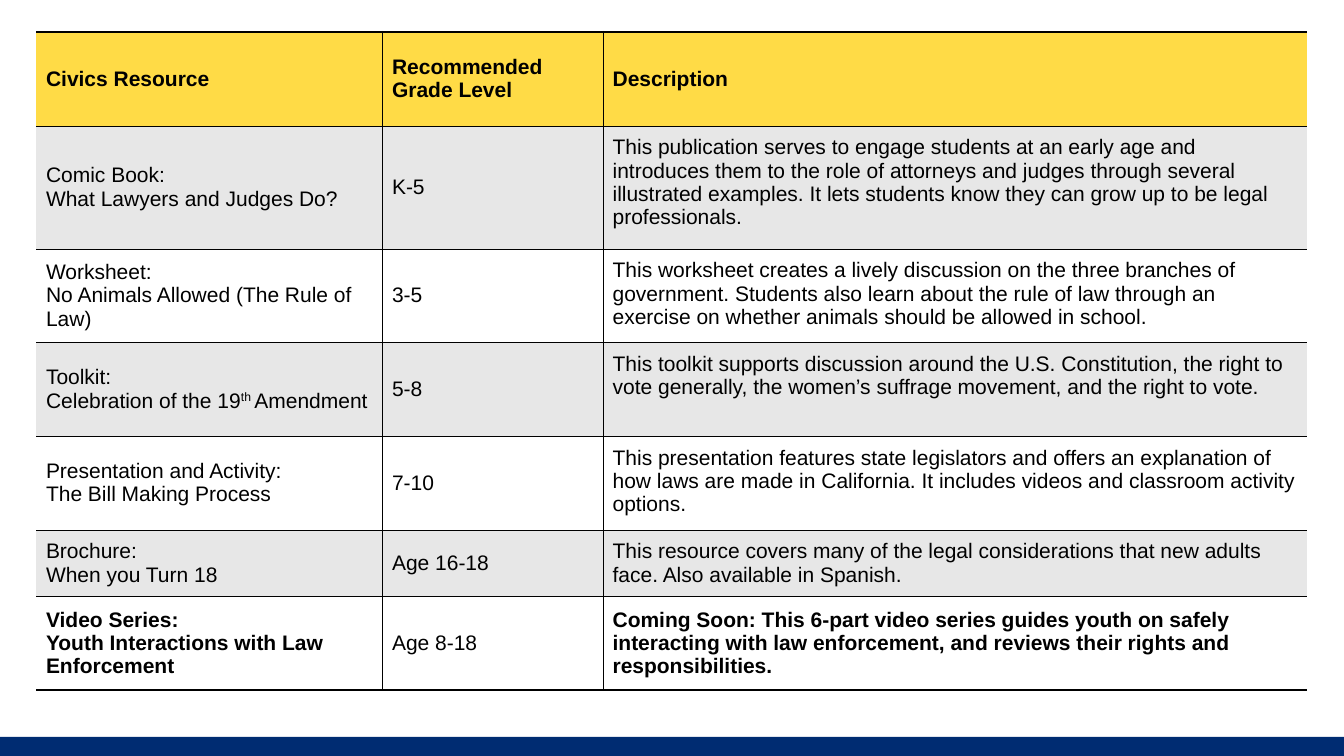
from lxml import etree
from pptx import Presentation
from pptx.dml.color import RGBColor
from pptx.enum.shapes import MSO_SHAPE
from pptx.enum.text import MSO_ANCHOR
from pptx.oxml.ns import qn
from pptx.util import Cm, Pt

RECT = MSO_SHAPE.RECTANGLE
TOP, MIDDLE = MSO_ANCHOR.TOP, MSO_ANCHOR.MIDDLE

BLACK, WHITE, GREY = "000000", "FFFFFF", "E7E7E7"
GOLD, NAVY = "FFDB46", "002C72"
THIN, THICK = 0.25, 2
WIDTHS = [8.72, 5.56, 17.76]
HEIGHTS = [2.36, 3.1, 2.36, 2.36, 2.36, 1.63, 2.36]

HEAD = [["Civics Resource"], ["Recommended", "Grade Level"], ["Description"]]
ITEMS = [
    ("Comic Book:", ["What Lawyers and Judges Do?"], "K-5",
     "This publication serves to engage students at an early age and "
     "introduces them to the role of attorneys and judges through several "
     "illustrated examples. It lets students know they can grow up to be "
     "legal professionals."),
    ("Worksheet:", ["No Animals Allowed (The Rule of Law)"], "3-5",
     "This worksheet creates a lively discussion on the three branches of "
     "government. Students also learn about the rule of law through an "
     "exercise on whether animals should be allowed in school."),
    ("Toolkit:", ["Celebration of the 19", "th ", "Amendment"], "5-8",
     "This toolkit supports discussion around the U.S. Constitution, the "
     "right to vote generally, the women’s suffrage movement, and the right "
     "to vote."),
    ("Presentation and Activity:", ["The Bill Making Process"], "7-10",
     "This presentation features state legislators and offers an explanation "
     "of how laws are made in California. It includes videos and classroom "
     "activity options."),
    ("Brochure:", ["When you Turn 18"], "Age 16-18",
     "This resource covers many of the legal considerations that new adults "
     "face. Also available in Spanish."),
    ("Video Series:", ["Youth Interactions with Law Enforcement"], "Age 8-18",
     "Coming Soon: This 6-part video series guides youth on safely "
     "interacting with law enforcement, and reviews their rights and "
     "responsibilities."),
]


def paint(fill, color):
    """Fill solidly with a hex colour."""
    fill.solid()
    fill.fore_color.rgb = RGBColor.from_string(color)


class Deck:
    """Style and current slide."""

    def __init__(self, font, size):
        """Start a wide deck with one blank slide."""
        self.font, self.size = font, size
        self.prs = Presentation()
        self.prs.slide_width, self.prs.slide_height = Cm(33.87), Cm(19.05)
        self.slide = self.prs.slides.add_slide(self.prs.slide_layouts[6])

    def bar(self, left, top, width, height, color):
        """Add a plain filled rectangle."""
        shape = self.slide.shapes.add_shape(
            RECT, Cm(left), Cm(top), Cm(width), Cm(height))
        shape.shadow.inherit = False
        paint(shape.fill, color)
        shape.line.fill.background()

    def table(self, left, top, widths, heights):
        """Add a table with the given column and row sizes."""
        grid = self.slide.shapes.add_table(
            len(heights), len(widths), Cm(left), Cm(top),
            Cm(sum(widths)), Cm(sum(heights))).table
        for col, width in zip(grid.columns, widths):
            col.width = Cm(width)
        for row, height in zip(grid.rows, heights):
            row.height = Cm(height)
        return grid

    def cell(self, cell, color, edges, anchor=MIDDLE):
        """Set borders, fill, insets and anchor of a cell."""
        props = cell._tc.get_or_add_tcPr()
        for side, width in edges.items():
            line = etree.SubElement(props, qn("a:ln" + side))
            if width:
                line.set("w", str(Pt(width)))
                solid = etree.SubElement(line, qn("a:solidFill"))
                etree.SubElement(solid, qn("a:srgbClr")).set("val", BLACK)
            else:
                etree.SubElement(line, qn("a:noFill"))
        paint(cell.fill, color)
        cell.margin_left = cell.margin_right = Cm(0.25)
        cell.margin_top = cell.margin_bottom = Cm(0.25)
        cell.vertical_anchor = anchor

    def run(self, para, text, bold=False, raised=False):
        """Add one run of text."""
        run = para.add_run()
        run.text = text
        font = run.font
        font.name, font.size, font.bold = self.font, Pt(self.size), bold
        font.color.rgb = RGBColor.from_string(BLACK)
        if raised:
            run._r.get_or_add_rPr().set("baseline", "30000")


def main():
    """Build the slide."""
    deck = Deck("Arial", 15)
    grid = deck.table(0.91, 0.81, WIDTHS, HEIGHTS)
    last, end = len(HEIGHTS) - 1, len(WIDTHS) - 1

    for r in range(last + 1):
        color = GOLD if r == 0 else GREY if r % 2 else WHITE
        for c in range(end + 1):
            edges = {"L": THIN if c else 0,
                     "R": THIN if c < end else 0,
                     "T": THIN if r else THICK,
                     "B": THIN if r < last else THICK}
            high = c == end and 0 < r < last
            deck.cell(grid.cell(r, c), color, edges, TOP if high else MIDDLE)

    for c, lines in enumerate(HEAD):
        frame = grid.cell(0, c).text_frame
        for i, line in enumerate(lines):
            para = frame.add_paragraph() if i else frame.paragraphs[0]
            deck.run(para, line, True)

    for r, (kind, name, grade, about) in enumerate(ITEMS, 1):
        bold = r == last
        first, mid, right = [
            grid.cell(r, c).text_frame.paragraphs[0] for c in range(3)]
        deck.run(first, kind, bold)
        first.add_line_break()
        for part in name:
            deck.run(first, part, bold, part == "th ")
        deck.run(mid, grade)
        deck.run(right, about, bold)

    deck.bar(0, 18.57, 33.87, 0.53, NAVY)
    deck.prs.save("out.pptx")


if __name__ == "__main__":
    main()
